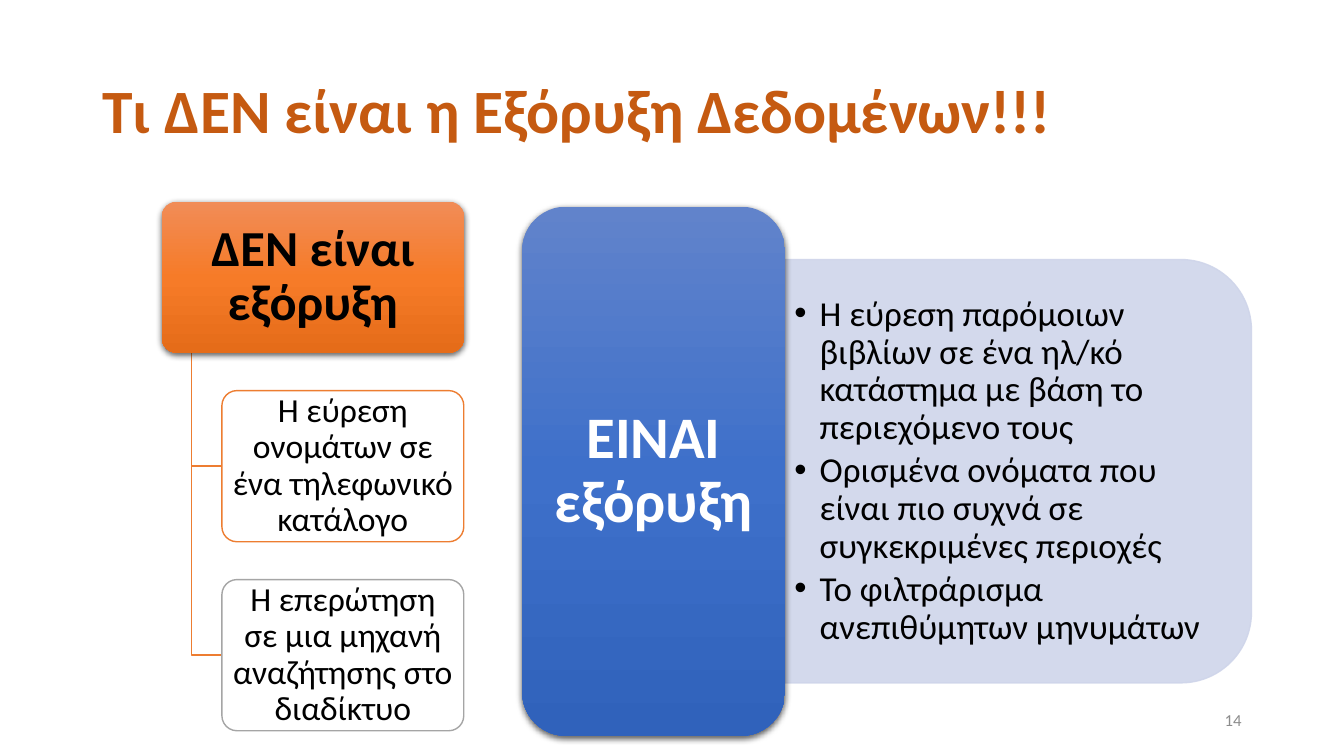
"""Build the slide that contrasts what is and is not data mining."""
from copy import deepcopy

from lxml import etree
from pptx import Presentation
from pptx.dml.color import RGBColor
from pptx.enum.shapes import MSO_SHAPE as Preset
from pptx.enum.text import MSO_ANCHOR as Anchor, PP_ALIGN as Align
from pptx.oxml.ns import qn
from pptx.util import Pt

COLOURS = {
    "title": "C55A11", "number": "8C8C8C", "black": "000000", "white": "FFFFFF",
    "orange": "ED7D31", "grey": "A5A5A5", "panel": "CFD5EA",
    "orange top": "F18C57", "orange middle": "F67B28", "orange bottom": "E56C19",
    "blue top": "6183CB", "blue middle": "3E70CA", "blue bottom": "3062BB",
}
RGB = {name: RGBColor.from_string(value) for name, value in COLOURS.items()}


def write(shape, lines, size, colour, bold=False, align=Align.CENTER, margins=(7.2, 3.6)):
    """Fill a shape with vertically centred paragraphs."""
    frame = shape.text_frame
    frame.word_wrap = True
    frame.vertical_anchor = Anchor.MIDDLE
    frame.margin_left = frame.margin_right = Pt(margins[0])
    frame.margin_top = frame.margin_bottom = Pt(margins[1])
    frame.text = "\n".join(lines)
    for para in frame.paragraphs:
        para.alignment = align
        para.line_spacing = 0.9
        para.font.name = "Calibri"
        para.font.size = Pt(size)
        para.font.bold = bold
        para.font.color.rgb = RGB[colour]


def make_translucent(shape):
    """Give every colour set so far on a shape 90% opacity."""
    for colour in shape._element.spPr.iter(qn("a:srgbClr")):
        etree.SubElement(colour, qn("a:alpha"), val="90000")


deck = Presentation()
deck.slide_width, deck.slide_height = Pt(960), Pt(540)
page = deck.slides.add_slide(deck.slide_layouts[5])
shapes = page.shapes

title = shapes.title
title.left, title.top, title.width, title.height = Pt(66), Pt(28.8), Pt(828), Pt(104.4)
write(title, ["Τι ΔΕΝ είναι η Εξόρυξη Δεδομένων!!!"], 44, "title", True, Align.LEFT)

number = shapes.add_textbox(Pt(678), Pt(500.4), Pt(216), Pt(28.8))
write(number, ["14"], 12, "number", align=Align.RIGHT)

not_mining = [
    ("Η εύρεση ονομάτων σε ένα τηλεφωνικό κατάλογο", "orange"),
    ("Η επερώτηση σε μια μηχανή αναζήτησης στο διαδίκτυο", "grey"),
]
for row, (example, outline) in enumerate(not_mining):
    top = 279 + 135 * row
    branch = shapes.build_freeform(Pt(137), Pt(252))
    branch.add_line_segments(
        [(Pt(137), Pt(top + 54)), (Pt(158.5), Pt(top + 54))], close=False)
    elbow = branch.convert_to_shape()
    elbow.shadow.inherit = False
    elbow.fill.background()
    elbow.line.color.rgb = RGB["orange"]
    elbow.line.width = Pt(1)

    card = shapes.add_shape(Preset.ROUNDED_RECTANGLE, Pt(158.5), Pt(top), Pt(172.8), Pt(108))
    card.adjustments[0] = 0.1
    card.shadow.inherit = False
    card.fill.solid()
    card.fill.fore_color.rgb = RGB["white"]
    make_translucent(card)
    card.line.color.rgb = RGB[outline]
    card.line.width = Pt(1)
    write(card, [example], 24, "black", margins=(3.6, 2.4))

panel = shapes.add_shape(
    Preset.ROUND_2_SAME_RECTANGLE, Pt(576), Pt(169.9), Pt(302.4), Pt(333.4))
panel.rotation = 90
panel.shadow.inherit = False
panel.fill.solid()
panel.fill.fore_color.rgb = RGB["panel"]
panel.line.color.rgb = RGB["panel"]
panel.line.width = Pt(1)
make_translucent(panel)

mining = [
    "Η εύρεση παρόμοιων βιβλίων σε ένα ηλ/κό κατάστημα με βάση το περιεχόμενο τους",
    "Ορισμένα ονόματα που είναι πιο συχνά σε συγκεκριμένες περιοχές",
    "Το φιλτράρισμα ανεπιθύμητων μηνυμάτων",
]
examples = shapes.add_textbox(Pt(560.4), Pt(200.2), Pt(319), Pt(272.9))
write(examples, mining, 25, "black", align=Align.LEFT)
for para in examples.text_frame.paragraphs:
    para.space_after = Pt(3.75)
    layout = para._p.get_or_add_pPr()
    layout.set("marL", str(Pt(18)))
    layout.set("indent", str(-Pt(18)))
    bullet_font = etree.Element(qn("a:buFont"), typeface="Arial")
    bullet = etree.Element(qn("a:buChar"), char="•")
    layout.find(qn("a:defRPr")).addprevious(bullet_font)
    bullet_font.addnext(bullet)

headings = [
    ("ΔΕΝ είναι εξόρυξη", (115.5, 144, 216, 108), 0.1, "orange", 36, "black", (5.4, 3.6)),
    ("ΕΙΝΑΙ εξόρυξη", (373, 147.6, 187.7, 378), 0.16667, "blue", 42, "white", (12.6, 6.3)),
]
for text, place, rounding, hue, size, colour, margins in headings:
    heading = shapes.add_shape(Preset.ROUNDED_RECTANGLE, *map(Pt, place))
    heading.adjustments[0] = rounding
    heading.line.fill.background()
    heading.fill.gradient()
    heading.fill.gradient_angle = 270
    stop_list = heading._element.spPr.find(".//" + qn("a:gsLst"))
    stop_list.append(deepcopy(stop_list[0]))
    for index, (stop, part) in enumerate(
            zip(heading.fill.gradient_stops, ("top", "middle", "bottom"))):
        stop.position = index / 2
        stop.color.rgb = RGB[f"{hue} {part}"]
    heading.shadow.inherit = False
    effects = heading._element.spPr.find(qn("a:effectLst"))
    shadow = etree.SubElement(
        effects, qn("a:outerShdw"), blurRad=str(Pt(4.5)), dist=str(Pt(1.5)),
        dir="5400000", algn="ctr", rotWithShape="0")
    shade = etree.SubElement(shadow, qn("a:srgbClr"), val=COLOURS["black"])
    etree.SubElement(shade, qn("a:alpha"), val="63000")
    write(heading, [text], size, colour, True, margins=margins)

deck.save("out.pptx")
